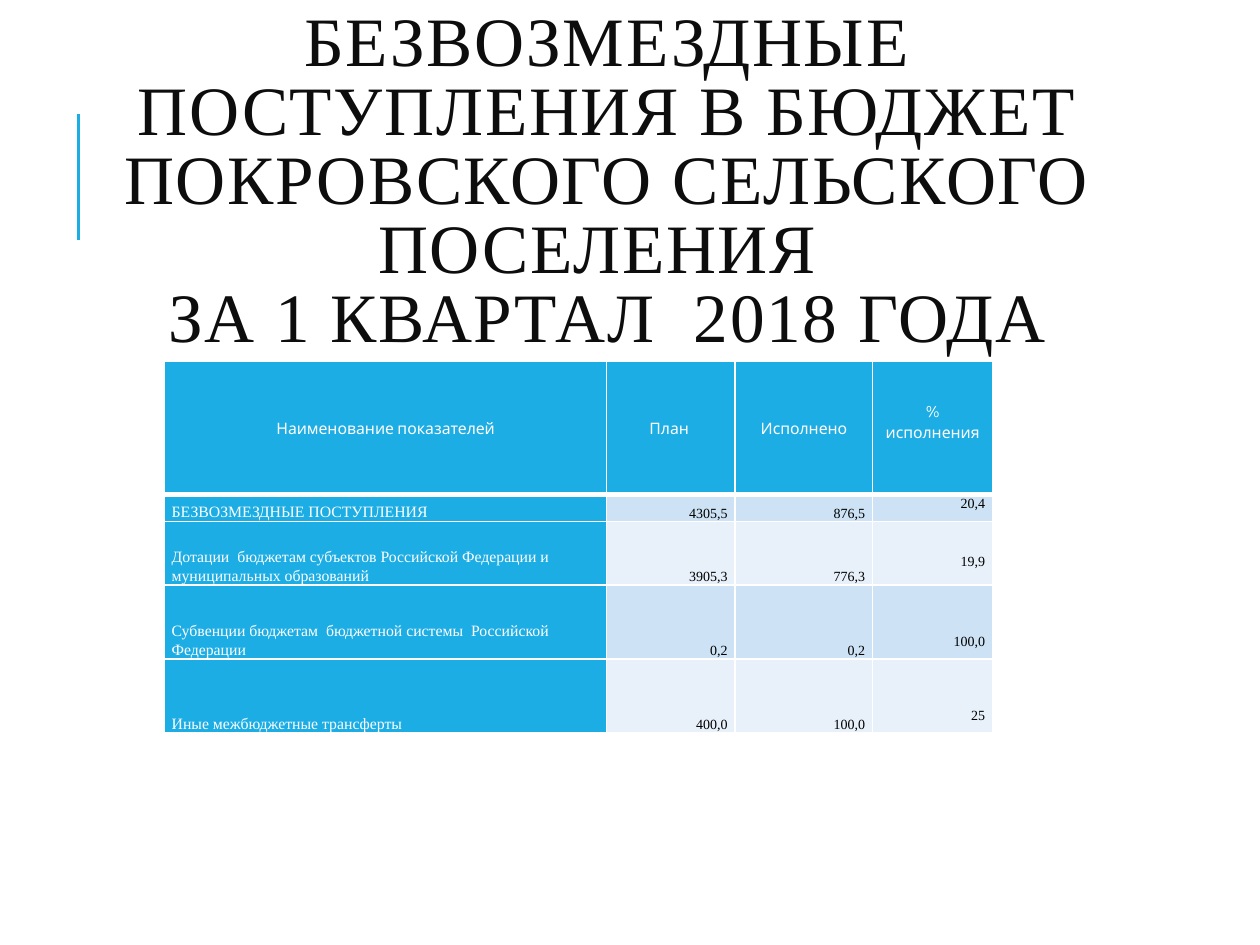
from pptx import Presentation, util as u
from pptx.dml.color import RGBColor
from pptx.enum import shapes, text
from pptx.oxml import parse_xml
from pptx.oxml.ns import nsdecls

COLORS = {"accent": "1CADE4", "band": "CDE3F5", "light": "E8F1FA",
          "white": "FFFFFF", "title": "0D0D0D", "value": "000000"}
SERIF, SANS = "Times New Roman", "Cabin"
ALIGN, ANCHOR = text.PP_ALIGN, text.MSO_ANCHOR
TITLE = ["БЕЗВОЗМЕЗДНЫЕ ПОСТУПЛЕНИЯ В БЮДЖЕТ ПОКРОВСКОГО СЕЛЬСКОГО ПОСЕЛЕНИЯ ",
         "ЗА 1 КВАРТАЛ  2018 ГОДА"]
HEADER = ["Наименование показателей", "План ", "Исполнено", "%\nисполнения"]
ROWS = [
    ["БЕЗВОЗМЕЗДНЫЕ ПОСТУПЛЕНИЯ", "4305,5", "876,5", "20,4"],
    ["Дотации  бюджетам субъектов Российской Федерации и муниципальных образований",
     "3905,3", "776,3", "19,9"],
    ["Субвенции бюджетам  бюджетной системы  Российской Федерации", "0,2", "0,2", "100,0"],
    ["Иные межбюджетные трансферты", "400,0", "100,0", "25"],
]
COLUMN_WIDTHS = [8.92, 2.59, 2.77, 2.42]
ROW_HEIGHTS = [2.68, 0.54, 1.28, 1.49, 1.49]
LAST_COLUMN_OFFSETS = [0.8, 0, 0.64, 0.96, 0.96]


class SlideBuilder:
    """Holds the style and the current slide and draws its elements."""

    def __init__(self, presentation):
        self.slide = presentation.slides.add_slide(presentation.slide_layouts[6])

    def color(self, name):
        return RGBColor.from_string(COLORS[name])

    def run(self, paragraph, content, size, font, color):
        run = paragraph.add_run()
        run.text = content
        run.font.size = u.Pt(size)
        run.font.name = font
        run.font.bold = False
        run.font.color.rgb = self.color(color)
        return run

    def line(self, x, top, bottom):
        line = self.slide.shapes.add_connector(
            shapes.MSO_CONNECTOR.STRAIGHT, u.Cm(x), u.Cm(bottom), u.Cm(x), u.Cm(top))
        line.line.color.rgb = self.color("accent")
        line.line.width = u.Pt(1.5)
        line._element.spPr.append(parse_xml(f"<a:effectLst {nsdecls('a')}/>"))

    def title(self, lines, left, top, width, height):
        shape = self.slide.shapes.add_textbox(u.Cm(left), u.Cm(top), u.Cm(width), u.Cm(height))
        frame = shape.text_frame
        frame.word_wrap = True
        frame.vertical_anchor = ANCHOR.MIDDLE
        paragraph = frame.paragraphs[0]
        paragraph.alignment = ALIGN.CENTER
        paragraph.line_spacing = 0.83
        for index, content in enumerate(lines):
            if index:
                paragraph.add_line_break()
            run = self.run(paragraph, content, 39.6, SERIF, "title")
            run.font._element.set("spc", "100")

    def borders(self, cell, bottom):
        properties = cell._tc.get_or_add_tcPr()
        for side, width in zip("LRTB", (1, 1, 1, bottom)):
            properties.append(parse_xml(
                f'<a:ln{side} {nsdecls("a")} w="{u.Pt(width)}"><a:solidFill>'
                f'<a:srgbClr val="{COLORS["white"]}"/></a:solidFill></a:ln{side}>'))

    def cell(self, cell, content, fill, align, anchor, offset, **style):
        cell.margin_left = cell.margin_right = u.Cm(0.15)
        cell.margin_top, cell.margin_bottom = u.Cm(offset), 0
        cell.vertical_anchor = anchor
        self.borders(cell, 3 if style["font"] == SANS else 1)
        cell.fill.solid()
        cell.fill.fore_color.rgb = self.color(fill)
        frame = cell.text_frame
        for index, part in enumerate(content.split("\n")):
            paragraph = frame.add_paragraph() if index else frame.paragraphs[0]
            paragraph.alignment = align
            paragraph.line_spacing = 1.07
            self.run(paragraph, part, **style)

    def table(self, rows, left, top):
        table = self.slide.shapes.add_table(
            len(rows), len(COLUMN_WIDTHS), u.Cm(left), u.Cm(top),
            u.Cm(sum(COLUMN_WIDTHS)), u.Cm(sum(ROW_HEIGHTS))).table
        for column, width in zip(table.columns, COLUMN_WIDTHS):
            column.width = u.Cm(width)
        for row, height in zip(table.rows, ROW_HEIGHTS):
            row.height = u.Cm(height)
        last = len(COLUMN_WIDTHS) - 1
        for r, row in enumerate(rows):
            for c, content in enumerate(row):
                header, label = r == 0, c == 0
                accent = header or label
                fill = "accent" if accent else "band" if r % 2 else "light"
                align = ALIGN.CENTER if header else ALIGN.LEFT if label else ALIGN.RIGHT
                anchor = (ANCHOR.TOP if c == last else
                          ANCHOR.MIDDLE if header else ANCHOR.BOTTOM)
                self.cell(table.cell(r, c), content, fill, align, anchor,
                          LAST_COLUMN_OFFSETS[r] if c == last else 0,
                          size=9 if accent else 8, font=SANS if header else SERIF,
                          color="white" if accent else "value")


def main():
    presentation = Presentation()
    presentation.slide_width, presentation.slide_height = u.Cm(25.4), u.Cm(19.05)
    builder = SlideBuilder(presentation)
    builder.line(1.58, 2.29, 4.83)
    builder.title(TITLE, 2.13, 1.63, 20.24, 4.17)
    builder.table([HEADER, *ROWS], 3.31, 7.29)
    presentation.save("out.pptx")


if __name__ == "__main__":
    main()
